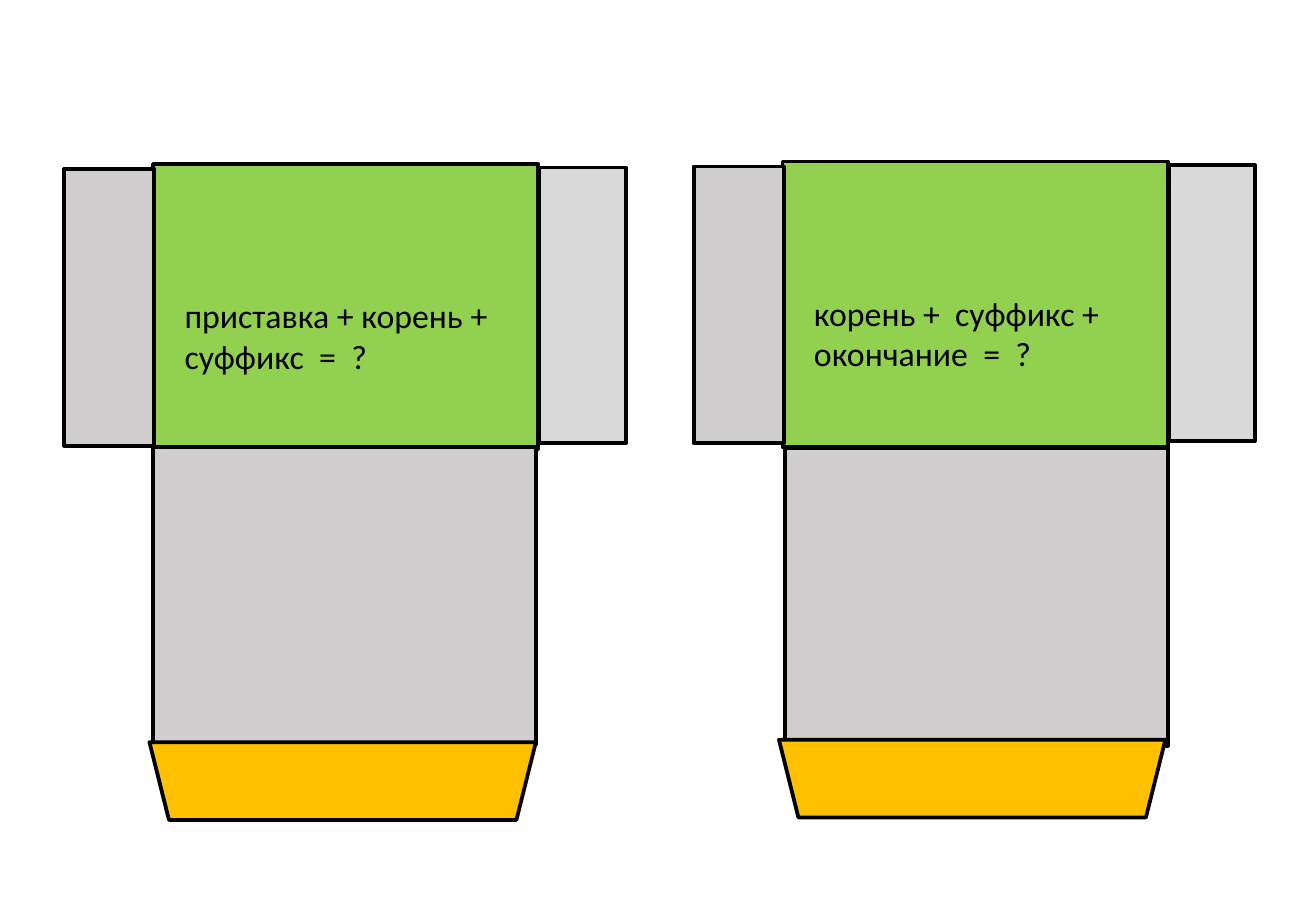
from dataclasses import dataclass

from pptx import Presentation
from pptx.dml.color import RGBColor
from pptx.enum.shapes import MSO_SHAPE
from pptx.shapes.shapetree import GroupShapes
from pptx.util import Inches, Pt

RECT, TRAPEZOID = MSO_SHAPE.RECTANGLE, MSO_SHAPE.TRAPEZOID
COLORS = {"green": "92D050", "gray": "D0CECE", "light": "D9D9D9",
          "orange": "FFC000", "black": "000000"}


@dataclass
class Panel:
    left: float
    top: float
    width: float
    height: float
    color: str
    kind: MSO_SHAPE = RECT
    rotation: int = 0


@dataclass
class Envelope:
    dx: float
    dy: float
    back: Panel
    text: str


FRONT = Panel(1.26, 1.35, 3.17, 2.35, "green")
FLAPS = [
    Panel(0.53, 1.39, 0.74, 2.28, "gray"),
    Panel(4.44, 1.38, 0.71, 2.27, "light"),
    Panel(1.23, 6.11, 3.18, 0.64, "orange", TRAPEZOID, 180),
]
ENVELOPES = [
    Envelope(0, 0, Panel(1.26, 3.68, 3.15, 2.45, "gray"),
             "приставка + корень + суффикс  =  ?"),
    Envelope(5.18, -0.02, Panel(1.28, 3.71, 3.15, 2.45, "gray"),
             "корень +  суффикс + окончание  =  ?"),
]


def rgb(name: str) -> RGBColor:
    return RGBColor.from_string(COLORS[name])


def add_panel(shapes: GroupShapes, panel: Panel, dx: float, dy: float) -> None:
    shape = shapes.add_shape(panel.kind, Inches(panel.left + dx), Inches(panel.top + dy),
                             Inches(panel.width), Inches(panel.height))
    shape.rotation = panel.rotation
    shape.shadow.inherit = False
    shape.fill.solid()
    shape.fill.fore_color.rgb = rgb(panel.color)
    shape.line.color.rgb = rgb("black")
    shape.line.width = Pt(2.25)


def add_label(shapes: GroupShapes, text: str, dx: float, dy: float) -> None:
    box = shapes.add_textbox(Inches(1.42 + dx), Inches(1.77 + dy), Inches(2.91), Inches(1.68))
    tf = box.text_frame
    tf.word_wrap = True
    tf.margin_top = Inches(0.66)
    r = tf.paragraphs[0].add_run()
    r.text = text
    for name, value in {"name": "Calibri", "size": Pt(20)}.items():
        setattr(r.font, name, value)
    r.font.color.rgb = rgb("black")


def main() -> None:
    prs = Presentation()
    prs.slide_width, prs.slide_height = Inches(10.83), Inches(7.5)
    s = prs.slides.add_slide(prs.slide_layouts[6])
    for env in ENVELOPES:
        shapes = s.shapes.add_group_shape().shapes
        for panel in [FRONT, env.back, *FLAPS]:
            add_panel(shapes, panel, env.dx, env.dy)
        add_label(shapes, env.text, env.dx, env.dy)
    prs.save("out.pptx")


if __name__ == "__main__":
    main()
